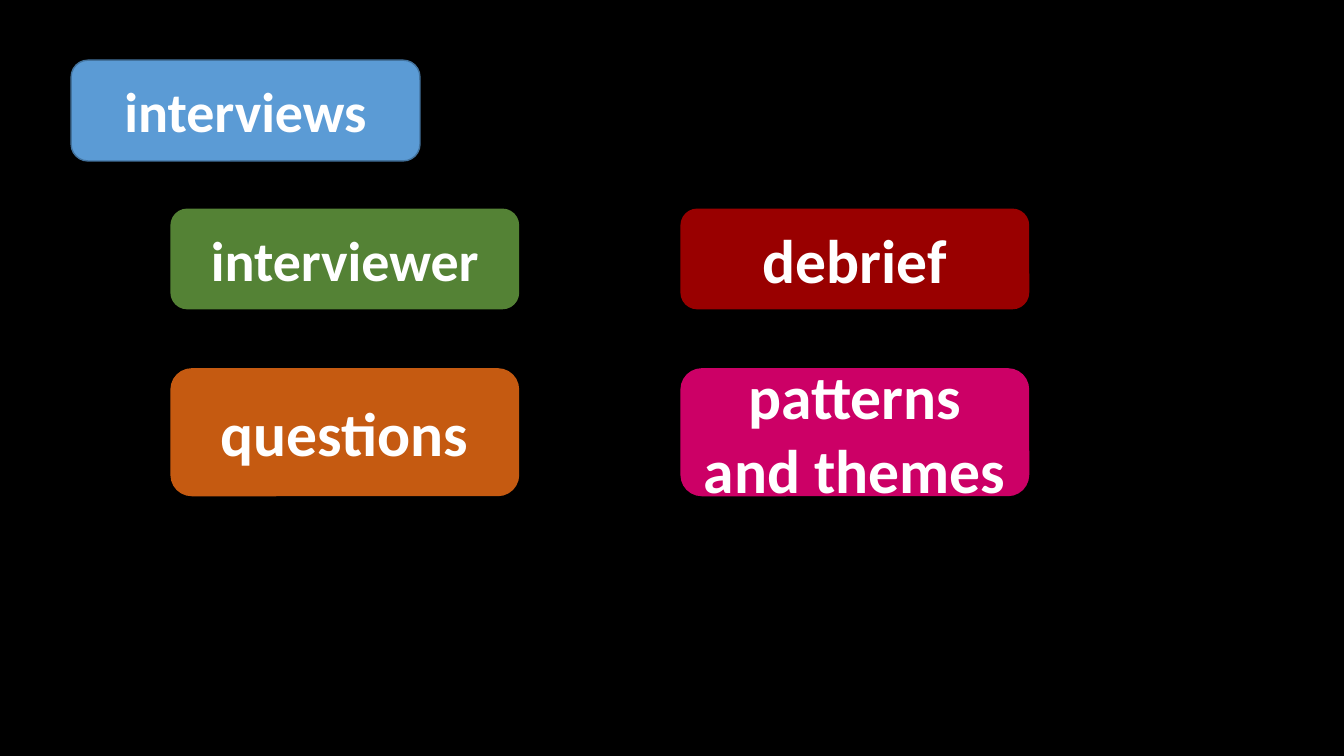
import pptx
import pptx.util
import pptx.dml.color
import pptx.enum.shapes
import pptx.enum.text

Pt = pptx.util.Pt
RGB = pptx.dml.color.RGBColor.from_string

TOPIC = ("interviews", "blue", "normal")
GRID = [
    [("interviewer", "green", "normal"), ("debrief", "red", "large")],
    [("questions", "orange", "large"), ("patterns and themes", "pink", "large")],
]

THEME = {
    "colors": {
        "background": "000000", "text": "FFFFFF", "outline": "43739E",
        "blue": "5B9BD5", "green": "548235", "red": "990000",
        "orange": "C55A11", "pink": "CC0066",
    },
    "sizes": {"normal": 40, "large": 44},
    "font": "Calibri",
}

SLIDE_W, SLIDE_H = 960, 540
BOX_W = 249.2
TOPIC_POS = (50.8, 43)
GRID_LEFT, GRID_TOP = 121.7, 149
COLUMN_STEP, ROW_GAP = 364.3, 42
TOPIC_H = 72
ROW_HEIGHTS = [72, 91.5]


def color(name):
    return RGB(THEME["colors"][name])


def add_box(slide, item, left, top, height):
    text, fill, size = item
    sp = slide.shapes.add_shape(
        pptx.enum.shapes.MSO_SHAPE.ROUNDED_RECTANGLE,
        Pt(left), Pt(top), Pt(BOX_W), Pt(height))
    sp.shadow.inherit = False
    sp.fill.solid()
    sp.fill.fore_color.rgb = color(fill)
    sp.line.fill.background()
    tf = sp.text_frame
    tf.word_wrap = True
    tf.vertical_anchor = pptx.enum.text.MSO_ANCHOR.MIDDLE
    p = tf.paragraphs[0]
    p.alignment = pptx.enum.text.PP_ALIGN.CENTER
    r = p.add_run()
    r.text = text
    font_format = {"name": THEME["font"], "size": Pt(THEME["sizes"][size]), "bold": True}
    for key, value in font_format.items():
        setattr(r.font, key, value)
    r.font.color.rgb = color("text")
    return sp


def main():
    prs = pptx.Presentation()
    prs.slide_width, prs.slide_height = Pt(SLIDE_W), Pt(SLIDE_H)
    slide = prs.slides.add_slide(prs.slide_layouts[6])
    slide.background.fill.solid()
    slide.background.fill.fore_color.rgb = color("background")

    topic = add_box(slide, TOPIC, *TOPIC_POS, TOPIC_H)
    topic.line.color.rgb = color("outline")
    topic.line.width = Pt(1)

    top = GRID_TOP
    for row, height in zip(GRID, ROW_HEIGHTS):
        for column, item in enumerate(row):
            add_box(slide, item, GRID_LEFT + column * COLUMN_STEP, top, height)
        top += height + ROW_GAP

    prs.save("out.pptx")


if __name__ == "__main__":
    main()
